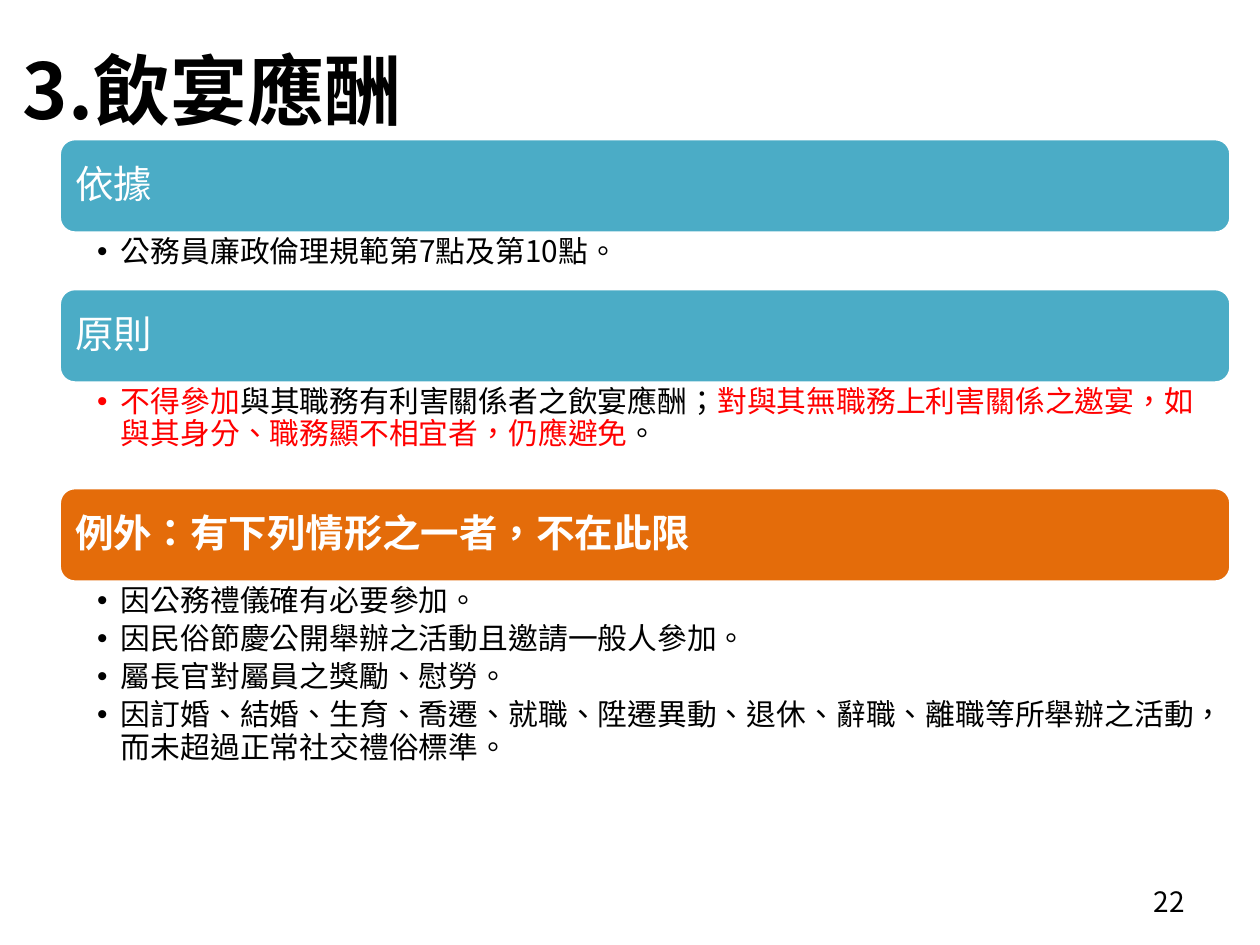
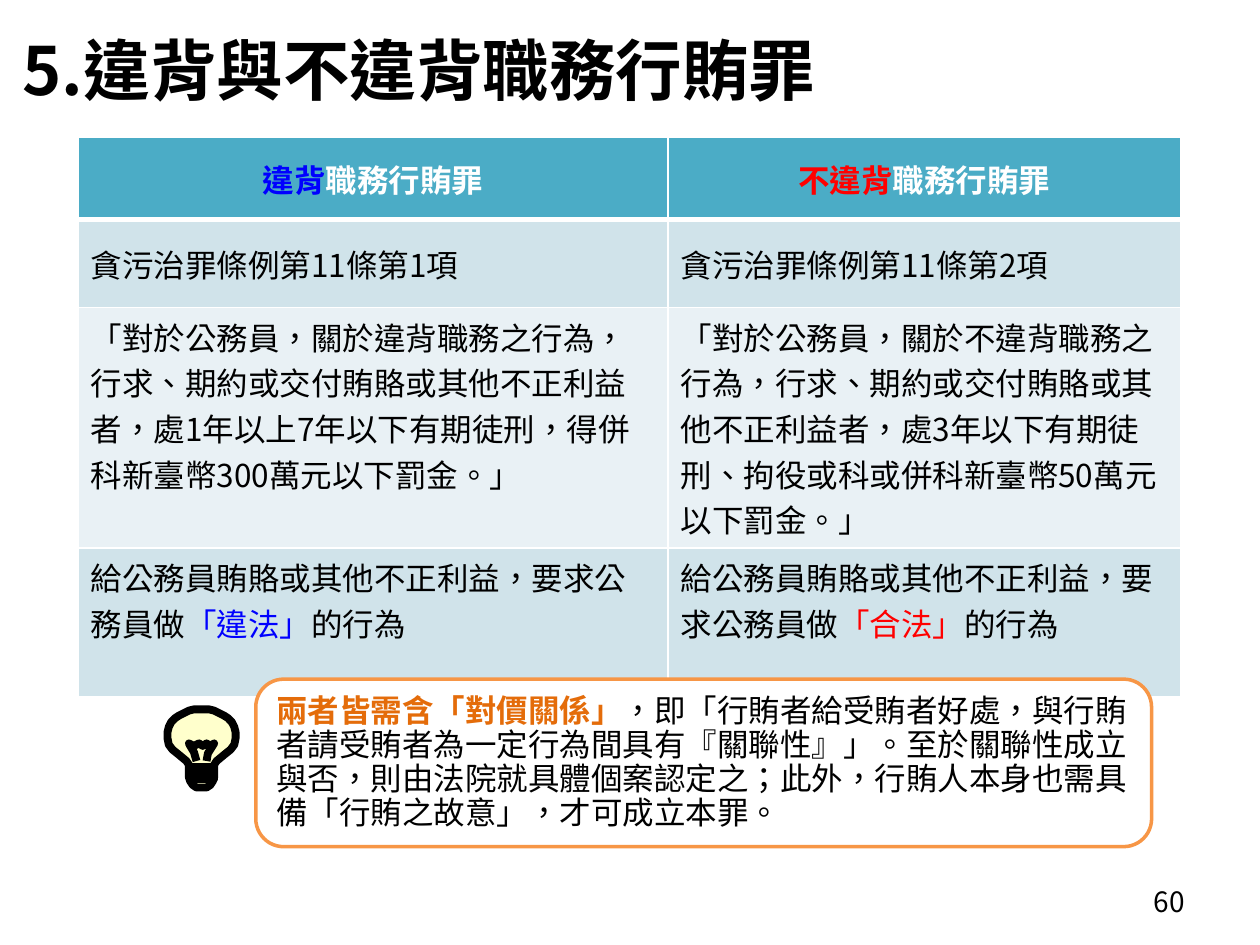
from dataclasses import dataclass

from lxml.etree import SubElement
from pptx import Presentation
from pptx.dml.color import RGBColor
from pptx.enum.shapes import MSO_SHAPE as Shape
from pptx.enum.text import MSO_ANCHOR as Anchor, MSO_AUTO_SIZE as AutoSize, PP_ALIGN as Align
from pptx.oxml.ns import qn
from pptx.util import Inches, Pt

CELL = Inches(0.1)  # the slide is a grid of 100 columns by 75 rows
COLUMNS, ROWS = 100, 75


@dataclass(frozen=True)
class Theme:
    sans: str = "Noto Sans CJK SC"
    sans_tc: str = "Noto Sans CJK TC"
    black: str = "000000"
    white: str = "FFFFFF"
    red: str = "FF0000"
    blue: str = "0000FF"
    teal: str = "4BACC6"
    orange: str = "E46C0A"
    outline: str = "F79646"
    cream: str = "FFFFCC"
    band_dark: str = "D0E3EA"
    band_light: str = "E9F1F5"
    title_size: int = 44
    long_title_size: int = 38
    header_size: int = 22
    list_size: int = 17
    body_size: int = 18
    number_size: int = 16


THEME = Theme()


@dataclass(frozen=True)
class Box:
    """A region measured in grid columns and rows."""
    left: float
    top: float
    width: float
    height: float

    def emu(self):
        return [round(n * CELL) for n in (self.left, self.top, self.width, self.height)]


@dataclass(frozen=True)
class Span:
    text: str
    color: str = THEME.black
    bold: bool = False
    font: str = THEME.sans


# Shared helpers

def rgb(color):
    return RGBColor.from_string(color)


def write_spans(para, spans, size):
    for item in spans:
        span = para.add_run()
        span.text = item.text
        span.font.size = Pt(size)
        span.font.bold = item.bold
        span.font.color.rgb = rgb(item.color)
        span.font.name = item.font
        props = span._r.get_or_add_rPr()
        props.set("lang", "zh-TW")
        SubElement(props, qn("a:ea")).set("typeface", item.font)


def move(shape, box):
    shape.left, shape.top, shape.width, shape.height = box.emu()


def paint(shape, fill, line, width):
    shape.shadow.inherit = False
    shape.fill.solid()
    shape.fill.fore_color.rgb = rgb(fill)
    shape.line.color.rgb = rgb(line)
    shape.line.width = Pt(width)


def rounded_box(page, box, spans, size, fill, line):
    shape = page.shapes.add_shape(Shape.ROUNDED_RECTANGLE, *box.emu())
    paint(shape, fill, line, 2)
    frame = shape.text_frame
    frame.word_wrap = True
    frame.vertical_anchor = Anchor.MIDDLE
    para = frame.paragraphs[0]
    para.alignment = Align.LEFT
    para.line_spacing = 0.9
    write_spans(para, spans, size)
    return shape


def place_title(page, box, spans, size):
    title = page.shapes.title
    move(title, box)
    frame = title.text_frame
    frame.auto_size = AutoSize.NONE
    frame.vertical_anchor = Anchor.MIDDLE
    frame.paragraphs[0].alignment = Align.LEFT
    write_spans(frame.paragraphs[0], spans, size)


def place_number(page, number):
    box = Box(COLUMNS - 28.3, ROWS - 5.5, 23.3, 4)
    frame = page.shapes.add_textbox(*box.emu()).text_frame
    frame.word_wrap = True
    frame.vertical_anchor = Anchor.MIDDLE
    frame.paragraphs[0].alignment = Align.RIGHT
    write_spans(frame.paragraphs[0], [Span(number, font=THEME.sans_tc)], THEME.number_size)


# Slide of stacked headers and lists

def place_list(holder, box, items):
    move(holder, box)
    frame = holder.text_frame
    frame.auto_size = AutoSize.NONE
    frame.vertical_anchor = Anchor.TOP
    frame.margin_left, frame.margin_right = Inches(0.3), Inches(0.17)
    frame.margin_top = frame.margin_bottom = Inches(0.03)
    for index, spans in enumerate(items):
        para = frame.add_paragraph() if index else frame.paragraphs[0]
        props = para._p.get_or_add_pPr()
        props.set("marL", str(Inches(0.19)))
        props.set("indent", str(-Inches(0.19)))
        SubElement(props, qn("a:buChar")).set("char", "•")
        para.line_spacing = 0.9
        para.space_before = Pt(0)
        para.space_after = Pt(3.4)
        write_spans(para, spans, THEME.list_size)


def place_sections(page, box, sections):
    header_rows = 7.5
    top = box.top
    holders = [item for item in page.placeholders if item.placeholder_format.idx in (1, 2, 4)]
    for holder, (header, fill, list_rows, items) in zip(holders, sections):
        header_box = Box(box.left, top, box.width, header_rows)
        shape = rounded_box(page, header_box, [header], THEME.header_size, fill, THEME.white)
        shape.text_frame.margin_left = Inches(0.09)
        top += header_rows
        place_list(holder, Box(box.left, top, box.width, list_rows), items)
        top += list_rows


def banquet_slide(deck):
    page = deck.slides.add_slide(deck.slide_layouts.get_by_name("Comparison"))
    spare = page.placeholders[3]
    spare.element.getparent().remove(spare.element)
    place_title(page, Box(0.8, 0.8, 90, 12.5), [Span("3.飲宴應酬", bold=True)], THEME.title_size)
    exceptions = (
        "因公務禮儀確有必要參加。",
        "因民俗節慶公開舉辦之活動且邀請一般人參加。",
        "屬長官對屬員之獎勵、慰勞。",
        "因訂婚、結婚、生育、喬遷、就職、陞遷異動、退休、辭職、離職等所舉辦之活動，而未超過正常社交禮俗標準。",
    )
    principle = [
        Span("不得參加", THEME.red),
        Span("與其職務有利害關係者之飲宴應酬；"),
        Span("對與其無職務上利害關係之邀宴，如與其身分、職務顯不相宜者，仍應避免", THEME.red),
        Span("。"),
    ]
    # Header, header fill, list height in rows, list items
    sections = (
        (Span("依據", THEME.white), THEME.teal, 4.4, [[Span("公務員廉政倫理規範第7點及第10點。")]]),
        (Span("原則", THEME.white), THEME.teal, 8.3, [principle]),
        (Span("例外：有下列情形之一者，不在此限", THEME.white, True), THEME.orange, 21.9,
         [[Span(text)] for text in exceptions]),
    )
    place_sections(page, Box(4.7, 11, 93, 57.1), sections)
    place_number(page, "22")


# Slide comparing the two offences

def set_border(cell, side, width):
    line = SubElement(cell._tc.get_or_add_tcPr(), qn(f"a:ln{side}"), w=str(Pt(width)))
    fill = SubElement(line, qn("a:solidFill"))
    SubElement(fill, qn("a:srgbClr")).set("val", THEME.white)


def place_table(page, box, column_shares, row_heights, rows):
    table = page.shapes.add_table(len(rows), len(column_shares), *box.emu()).table
    for column, share in zip(table.columns, column_shares):
        column.width = round(box.width * share * CELL)
    fills = (THEME.teal, THEME.band_dark, THEME.band_light, THEME.band_dark)
    for index, (contents, height, fill) in enumerate(zip(rows, row_heights, fills)):
        table.rows[index].height = round(height * CELL)
        for cell, spans in zip(table.rows[index].cells, contents):
            for side in "LRTB":
                header_edge = (index, side) in ((0, "B"), (1, "T"))
                set_border(cell, side, 3 if header_edge else 1)
            cell.fill.solid()
            cell.fill.fore_color.rgb = rgb(fill)
            cell.vertical_anchor = Anchor.MIDDLE if index < 2 else Anchor.TOP
            para = cell.text_frame.paragraphs[0]
            para.alignment = Align.LEFT if index else Align.CENTER
            write_spans(para, spans, THEME.body_size)


def draw_outline(page, box, contours, close):
    """Draw contours given in tenths of a cell from the box's top centre."""
    builder = page.shapes.build_freeform(*contours[0][0], scale=CELL / 10)
    for index, points in enumerate(contours):
        if index:
            builder.move_to(*points[0])
        builder.add_line_segments(points[1:], close=close)
    left, top, width, _ = box.emu()
    shape = builder.convert_to_shape(left + width // 2, top)
    paint(shape, THEME.cream, THEME.black, 4.5)


def place_bulb(page, box):
    # Glass and socket: the right half, mirrored
    half = [(0, 0), (6, 0), (10, 1), (14, 3), (18, 5), (21, 7), (24, 10), (26, 14), (27, 18),
            (27, 23), (26, 28), (23, 32), (18, 36), (12, 41), (10, 44), (10, 54),
            (9, 57), (7, 60), (4, 62), (0, 62)]
    mirrored = [(-x, y) for x, y in reversed(half[1:-1])]
    draw_outline(page, box, [half + mirrored], close=True)
    # Filament and screw thread
    filament = [(-4, 41), (-6, 34), (-9, 29), (-10, 27), (-6, 29), (-2, 27), (1, 29),
                (4, 27), (7, 29), (10, 27), (5, 35), (4, 41)]
    thread = [(x, y) for y, side in ((46, -10), (49, 10), (52, -10), (55, 10)) for x in (side, -side)]
    draw_outline(page, box, [filament, thread], close=False)


def bribery_slide(deck):
    page = deck.slides.add_slide(deck.slide_layouts.get_by_name("Title Only"))
    title = [Span("5.違背", bold=True), Span("與不違背職務行賄罪", bold=True, font=THEME.sans_tc)]
    place_title(page, Box(0.8, -0.8, 90, 12.5), title, THEME.long_title_size)
    # Kind, colour, paragraph number, statute, nature of the act
    offences = (
        ("違背", THEME.blue, 1,
         "「對於公務員，關於違背職務之行為，行求、期約或交付賄賂或其他不正利益者，"
         "處1年以上7年以下有期徒刑，得併科新臺幣300萬元以下罰金。」", "「違法」"),
        ("不違背", THEME.red, 2,
         "「對於公務員，關於不違背職務之行為，行求、期約或交付賄賂或其他不正利益者，"
         "處3年以下有期徒刑、拘役或科或併科新臺幣50萬元以下罰金。」", "「合法」"),
    )
    columns = [
        ([Span(kind, color, True), Span("職務行賄罪", THEME.white, True)],
         [Span(f"貪污治罪條例第11條第{number}項")],
         [Span(statute)],
         [Span("給公務員賄賂或其他不正利益，要求公務員做"), Span(act, color), Span("的行為")])
        for kind, color, number, statute, act in offences
    ]
    place_table(page, Box(6.2, 10.9, 87.5, 44.3), (0.535, 0.465), (6.5, 7, 19, 11.8),
                list(zip(*columns)))
    # Note with the light bulb
    note = [
        Span("兩者皆需含「對價關係」", THEME.orange, True),
        Span("，即「行賄者給受賄者好處，與行賄者請受賄者為一定行為間具有『關聯性』」。"
             "至於關聯性成立與否，則由法院就具體個案認定之；此外，行賄人本身也需具備"
             "「行賄之故意」，才可成立本罪。"),
    ]
    rounded_box(page, Box(20.3, 53.9, 71.1, 13.3), note, THEME.body_size, THEME.white, THEME.outline)
    place_bulb(page, Box(13.3, 56.3, 5.4, 6.2))
    place_number(page, "60")


def main():
    deck = Presentation()
    deck.slide_width, deck.slide_height = COLUMNS * CELL, ROWS * CELL
    banquet_slide(deck)
    bribery_slide(deck)
    deck.save("out.pptx")


if __name__ == "__main__":
    main()
